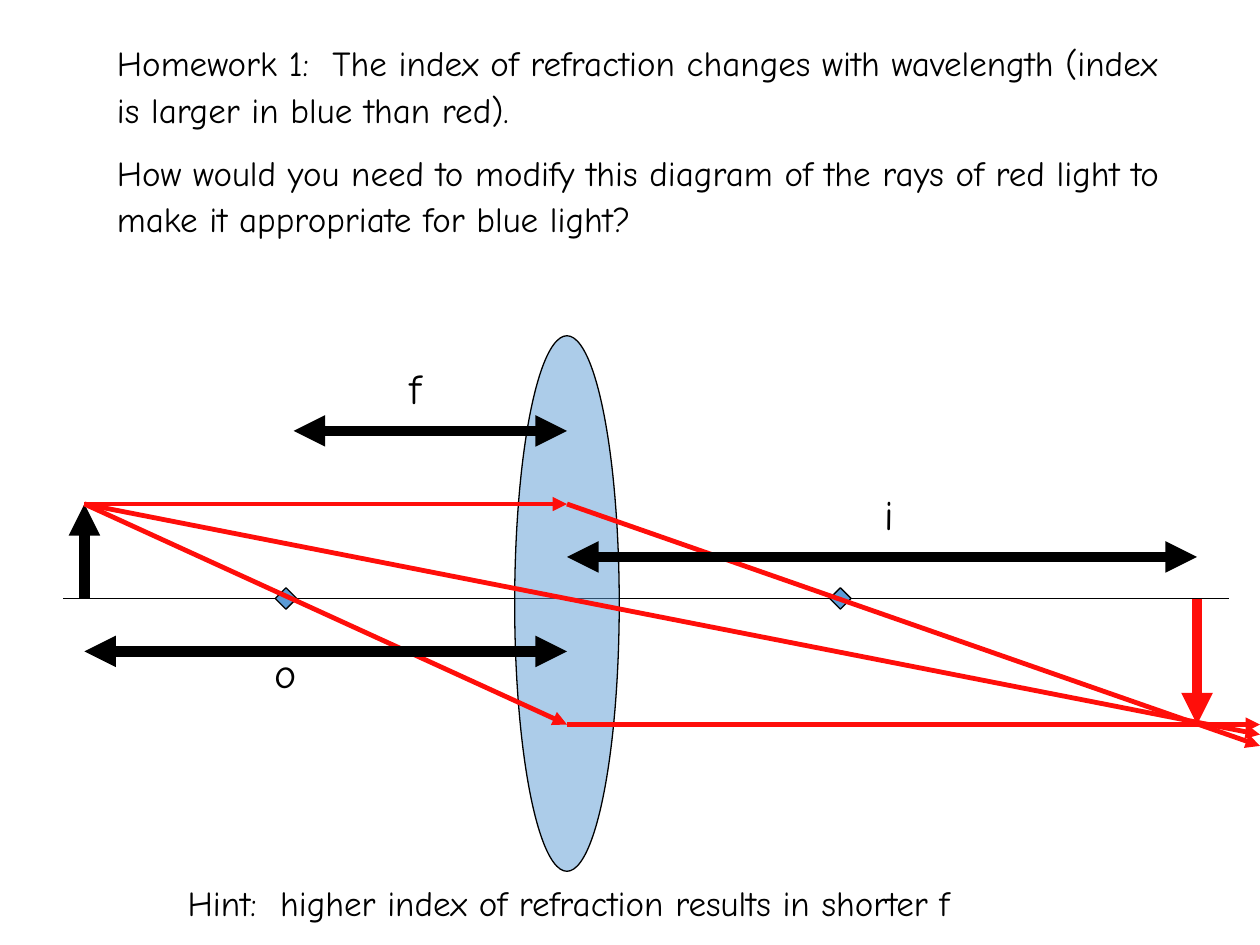
from dataclasses import dataclass

import pptx
import pptx.dml.color
import pptx.enum.shapes
import pptx.enum.text
import pptx.oxml
import pptx.oxml.ns
import pptx.util
from pptx.util import Inches

FONT = "Comic Neue"
BLACK, RED, GLASS = "000000", "FF0E0A", "5B9BD5"
THIN, RAY, THICK = 0.75, 2.75, 6

OBJECT_X, LENS_X, IMAGE_X, EDGE_X = 0.67, 4.5, 9.5, 10
AXIS_Y, OBJECT_Y, IMAGE_Y = 4.75, 4, 5.75
FOCUS_XS = (2.27, 6.67)
FOCUS_SIZE = 0.17
LENS_WIDTH, LENS_HEIGHT = 0.83, 4.25


@dataclass
class Line:
    start: tuple[float, float]
    end: tuple[float, float]
    color: str = BLACK
    width: float = THICK
    head: bool = False
    tail: bool = True


@dataclass
class Label:
    text: str
    left: float
    top: float
    width: float
    height: float = 0.57
    size: float = 24


OBJECT_TIP = (OBJECT_X, OBJECT_Y)
LENS_TOP_RAY = (LENS_X, OBJECT_Y)
LENS_LOW_RAY = (LENS_X, IMAGE_Y)

AXIS = Line((0.5, AXIS_Y), (9.75, AXIS_Y), width=THIN, tail=False)
CENTRAL_RAY = Line(OBJECT_TIP, (EDGE_X, 5.83), RED, RAY)
ARROWS = [
    Line((OBJECT_X, AXIS_Y), OBJECT_TIP),
    Line(OBJECT_TIP, LENS_TOP_RAY, RED, RAY),
    Line(LENS_TOP_RAY, (EDGE_X, 5.92), RED, RAY),
    Line(OBJECT_TIP, LENS_LOW_RAY, RED, RAY),
    Line(LENS_LOW_RAY, (EDGE_X, IMAGE_Y), RED, RAY),
    Line((IMAGE_X, AXIS_Y), (IMAGE_X, IMAGE_Y), RED),
    Line((2.33, 3.42), (LENS_X, 3.42), head=True),
    Line((LENS_X, 4.42), (IMAGE_X, 4.42), head=True),
    Line((LENS_X, 5.17), (OBJECT_X, 5.17), head=True),
]
DISTANCE_LABELS = [
    Label("f", 3.15, 2.83, 0.37),
    Label("o", 2.08, 5.08, 0.38),
    Label("i", 6.92, 3.83, 0.3),
]
HINT = Label("Hint:  higher index of refraction results in shorter f",
             1, 6.92, 7.03, 0.49, 20)
QUESTION = [
    "Homework 1:  The index of refraction changes with wavelength "
    "(index is larger in blue than red).",
    "How would you need to modify this diagram of the rays of red light "
    "to make it appropriate for blue light?",
]


def rgb(color: str) -> pptx.dml.color.RGBColor:
    return pptx.dml.color.RGBColor.from_string(color)


def style_text(paragraph, size: float) -> None:
    paragraph.font.name = FONT
    paragraph.font.size = pptx.util.Pt(size)
    paragraph.font.color.rgb = rgb(BLACK)


def draw_line(slide, line: Line) -> None:
    connector = slide.shapes.add_connector(
        pptx.enum.shapes.MSO_CONNECTOR.STRAIGHT,
        *map(Inches, line.start + line.end))
    connector.line.color.rgb = rgb(line.color)
    connector.line.width = pptx.util.Pt(line.width)
    outline = connector.line._get_or_add_ln()
    for tag, shown in (("a:headEnd", line.head), ("a:tailEnd", line.tail)):
        if shown:
            end = pptx.oxml.parse_xml(
                f'<{tag} {pptx.oxml.ns.nsdecls("a")} type="triangle"/>')
            outline.append(end)
    connector._element.spPr.append(pptx.oxml.parse_xml(
        f'<a:effectLst {pptx.oxml.ns.nsdecls("a")}/>'))


def draw_glass(slide, kind, center_x: float, center_y: float,
               width: float, height: float):
    """Draw a blue, thinly outlined shape around its centre."""
    shape = slide.shapes.add_shape(
        kind, Inches(center_x - width / 2), Inches(center_y - height / 2),
        Inches(width), Inches(height))
    shape.shadow.inherit = False
    shape.fill.solid()
    shape.fill.fore_color.rgb = rgb(GLASS)
    shape.line.color.rgb = rgb(BLACK)
    shape.line.width = pptx.util.Pt(THIN)
    return shape


def make_half_transparent(shape) -> None:
    color = shape._element.spPr.find(
        "/".join(map(pptx.oxml.ns.qn, ("a:solidFill", "a:srgbClr"))))
    color.append(pptx.oxml.parse_xml(
        f'<a:alpha {pptx.oxml.ns.nsdecls("a")} val="50000"/>'))


def draw_label(slide, label: Label):
    box = slide.shapes.add_textbox(*map(
        Inches, (label.left, label.top, label.width, label.height)))
    box.text_frame.word_wrap = False
    paragraph = box.text_frame.paragraphs[0]
    paragraph.text = label.text
    style_text(paragraph, label.size)
    return box.text_frame


def draw_question(slide) -> None:
    box = slide.shapes.add_textbox(*map(Inches, (0.83, 0.25, 8.5, 2)))
    frame = box.text_frame
    frame.word_wrap = True
    frame.text = "\n".join(QUESTION)
    for paragraph in frame.paragraphs:
        paragraph.line_spacing = 1.1
        paragraph.space_before = pptx.util.Pt(10)
        style_text(paragraph, 20)


def main() -> None:
    presentation = pptx.Presentation()
    presentation.slide_width = Inches(10)
    presentation.slide_height = Inches(7.5)
    slide = presentation.slides.add_slide(presentation.slide_layouts[6])
    shapes = pptx.enum.shapes.MSO_SHAPE

    draw_question(slide)
    draw_line(slide, AXIS)
    lens = draw_glass(slide, shapes.OVAL, LENS_X, 4.79,
                      LENS_WIDTH, LENS_HEIGHT)
    make_half_transparent(lens)
    draw_line(slide, CENTRAL_RAY)
    for focus_x in FOCUS_XS:
        draw_glass(slide, shapes.DIAMOND, focus_x, AXIS_Y,
                   FOCUS_SIZE, FOCUS_SIZE)
    for arrow in ARROWS:
        draw_line(slide, arrow)
    for label in DISTANCE_LABELS:
        draw_label(slide, label)

    hint = draw_label(slide, HINT)
    hint.vertical_anchor = pptx.enum.text.MSO_ANCHOR.MIDDLE
    hint.paragraphs[0].alignment = pptx.enum.text.PP_ALIGN.CENTER
    presentation.save("out.pptx")


if __name__ == "__main__":
    main()
